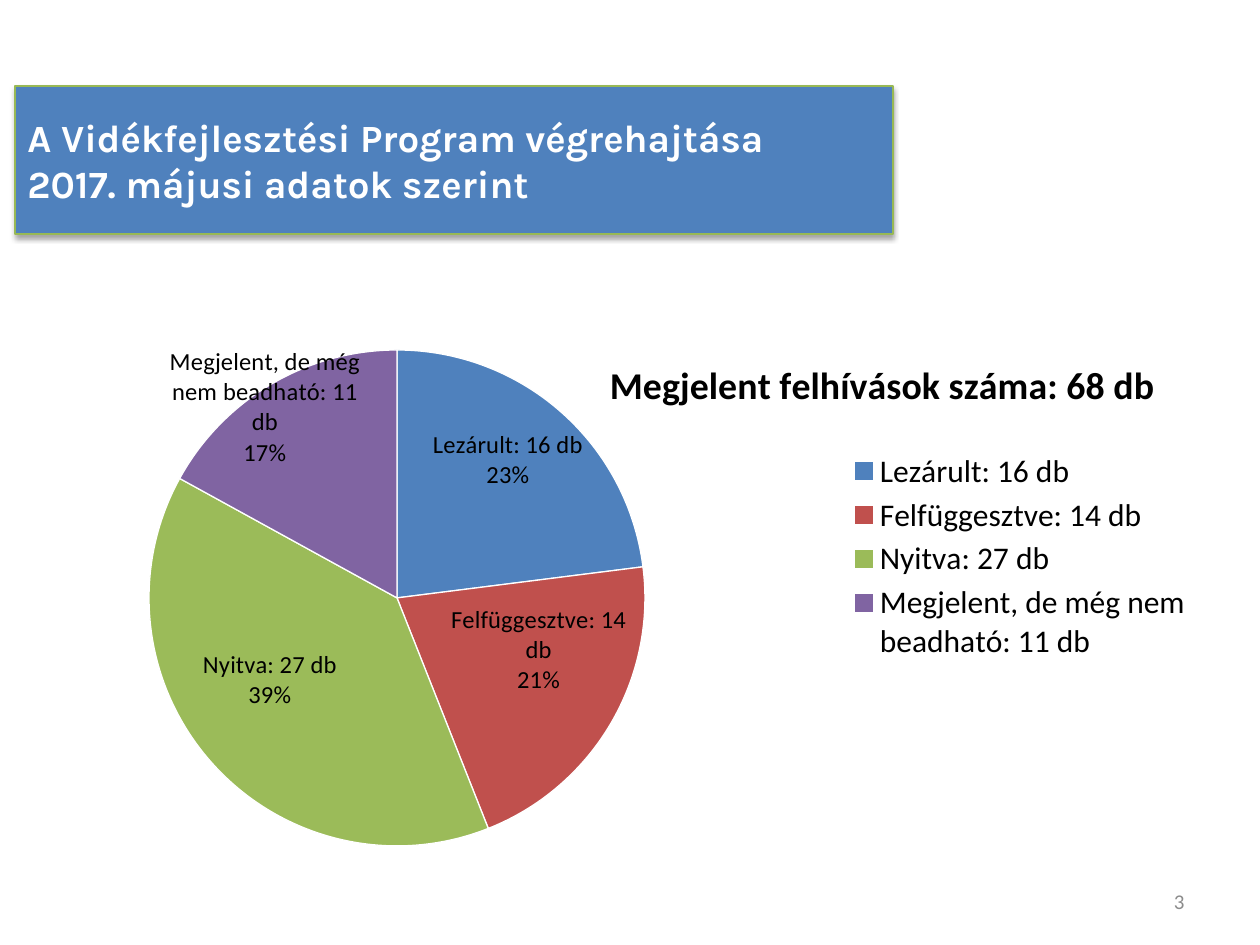
from lxml import etree
from pptx import Presentation
from pptx.chart.data import CategoryChartData
from pptx.dml.color import RGBColor
from pptx.enum.chart import XL_CHART_TYPE, XL_LABEL_POSITION, XL_LEGEND_POSITION
from pptx.enum.shapes import MSO_SHAPE
from pptx.enum.text import MSO_ANCHOR, PP_ALIGN
from pptx.oxml import parse_xml
from pptx.oxml.ns import nsdecls, qn
from pptx.util import Pt

PIE = XL_CHART_TYPE.PIE
CENTER = XL_LABEL_POSITION.CENTER
LEGEND_RIGHT = XL_LEGEND_POSITION.RIGHT
RECTANGLE = MSO_SHAPE.RECTANGLE
MIDDLE = MSO_ANCHOR.MIDDLE
LEFT, RIGHT = PP_ALIGN.LEFT, PP_ALIGN.RIGHT

WHITE = RGBColor(0xFF, 0xFF, 0xFF)
BLACK = RGBColor(0, 0, 0)
GRAY = RGBColor(0x8C, 0x8C, 0x8C)
BLUE = RGBColor(0x4F, 0x81, 0xBD)
RED = RGBColor(0xC0, 0x50, 0x4D)
GREEN = RGBColor(0x9B, 0xBB, 0x59)
PURPLE = RGBColor(0x80, 0x64, 0xA2)
BORDER_GREEN = RGBColor(0x98, 0xB9, 0x55)

PX = 914400 / 126
CHART_WIDTH, CHART_HEIGHT = 1134, 624
LABEL_WIDTH = 228
LABEL_LINE_HEIGHT = 31


def box(*lengths):
    return [round(length * PX) for length in lengths]


def chart_layout(x, y, width=None, height=None, edge=True):
    """Manual layout in px of the chart; without edge, x and y are an offset."""
    values = dict(xMode="edge", yMode="edge") if edge else {}
    values.update(x=round(x / CHART_WIDTH, 4), y=round(y / CHART_HEIGHT, 4))
    if width:
        values.update(w=round(width / CHART_WIDTH, 4), h=round(height / CHART_HEIGHT, 4))
    layout = parse_xml(f"<c:layout {nsdecls('c')}><c:manualLayout/></c:layout>")
    for name, value in values.items():
        etree.SubElement(layout[0], qn(f"c:{name}")).set("val", str(value))
    return layout


presentation = Presentation()
presentation.slide_width, presentation.slide_height = box(1260, 945)
slide = presentation.slides.add_slide(presentation.slide_layouts[6])

# Slide number and heading
number = slide.shapes.add_textbox(*box(903, 876, 294, 50))
heading = slide.shapes.add_shape(RECTANGLE, *box(15, 86, 878, 148))
heading.fill.solid()
heading.fill.fore_color.rgb = BLUE
heading.line.color.rgb = BORDER_GREEN
heading.line.width = Pt(0.75)
heading.shadow.inherit = False
effects = heading._element.spPr.find(qn("a:effectLst"))
effects.append(parse_xml(
    f'<a:outerShdw {nsdecls("a")} blurRad="39370" dist="22860" dir="5400000" rotWithShape="0">'
    '<a:srgbClr val="000000"><a:alpha val="35000"/></a:srgbClr></a:outerShdw>'))

TEXTS = [
    (number, ["3"], RIGHT, dict(name="Calibri", size=Pt(12), bold=False), GRAY),
    (heading, ["A Vidékfejlesztési Program végrehajtása", "2017. májusi adatok szerint"],
     LEFT, dict(name="Karla", size=Pt(22), bold=True), WHITE),
]
for shape, lines, alignment, font_format, color in TEXTS:
    frame = shape.text_frame
    frame.word_wrap = True
    frame.vertical_anchor = MIDDLE
    frame.text = "\n".join(lines)
    for paragraph in frame.paragraphs:
        paragraph.alignment = alignment
        for name, value in font_format.items():
            setattr(paragraph.runs[0].font, name, value)
        paragraph.runs[0].font.color.rgb = color

# Pie: category, percentage, colour, label offset from the middle of the slice, label lines
SLICES = [
    ("Lezárult: 16 db", 23, BLUE, (29, -45), 2),
    ("Felfüggesztve: 14 db", 21, RED, (35, -11), 2),
    ("Nyitva: 27 db", 39, GREEN, (-34, 0), 2),
    ("Megjelent, de még nem beadható: 11 db", 17, PURPLE, (-69, -84), 3),
]
data = CategoryChartData()
data.categories = [category for category, *_ in SLICES]
data.add_series("Series 1", [percentage for _, percentage, *_ in SLICES])
chart = slide.shapes.add_chart(PIE, *box(64, 244, CHART_WIDTH, CHART_HEIGHT), data).chart
chart.font.name = "Calibri"
chart.font.size = Pt(18)
chart.font.color.rgb = BLACK

chart.has_title = True
chart.chart_title.text_frame.text = "Megjelent felhívások száma: 68 db"
title_font = chart.chart_title.text_frame.paragraphs[0].runs[0].font
title_font.name = "Calibri"
title_font.size = Pt(21.6)
title_font.bold = True
title_font.color.rgb = BLACK
chart.has_legend = True
chart.legend.position = LEGEND_RIGHT
chart.legend.include_in_layout = False

title = chart.chart_title._element
legend = chart.legend._element
plot_area = chart._chartSpace.chart.plotArea
for part in (title, legend, plot_area):
    for old_layout in part.findall(qn("c:layout")):
        part.remove(old_layout)
title.find(qn("c:tx")).addnext(chart_layout(539, 107))
legend.find(qn("c:legendPos")).addnext(chart_layout(784, 202, 350, 220))
pie_layout = chart_layout(85, 106, 496, 496)
etree.SubElement(pie_layout[0], qn("c:layoutTarget")).set("val", "inner")
pie_layout[0].insert(0, pie_layout[0][-1])
plot_area.insert(0, pie_layout)

plot = chart.plots[0]
plot.vary_by_categories = True
series = plot.series[0]
for index, (_, _, color, offset, line_count) in enumerate(SLICES):
    point = series.points[index]
    point.format.fill.solid()
    point.format.fill.fore_color.rgb = color
    point.format.line.color.rgb = WHITE
    point.format.line.width = Pt(0.75)
    label = point.data_label
    label.font.size = Pt(14)
    label.font.name = "Calibri"
    label.font.color.rgb = BLACK
    label.position = CENTER
    label_xml = series._element.find(qn("c:dLbls")).findall(qn("c:dLbl"))[index]
    label_xml.find(qn("c:idx")).addnext(chart_layout(*offset, edge=False))
    for name, shown in dict(showVal=0, showCatName=1, showPercent=1).items():
        label_xml.find(qn(f"c:{name}")).set("val", str(shown))
    etree.SubElement(label_xml, qn("c:separator")).text = "\n"
    width = round(LABEL_WIDTH / CHART_WIDTH, 4)
    height = round(line_count * LABEL_LINE_HEIGHT / CHART_HEIGHT, 4)
    label_xml.append(parse_xml(
        f'<c:extLst {nsdecls("c")}><c:ext uri="{{CE6537A1-D6FC-4f65-9D91-7224C49458BB}}" '
        'xmlns:c15="http://schemas.microsoft.com/office/drawing/2012/chart"><c15:layout>'
        f'<c:manualLayout><c:w val="{width}"/><c:h val="{height}"/></c:manualLayout>'
        '</c15:layout></c:ext></c:extLst>'))

presentation.save("out.pptx")
